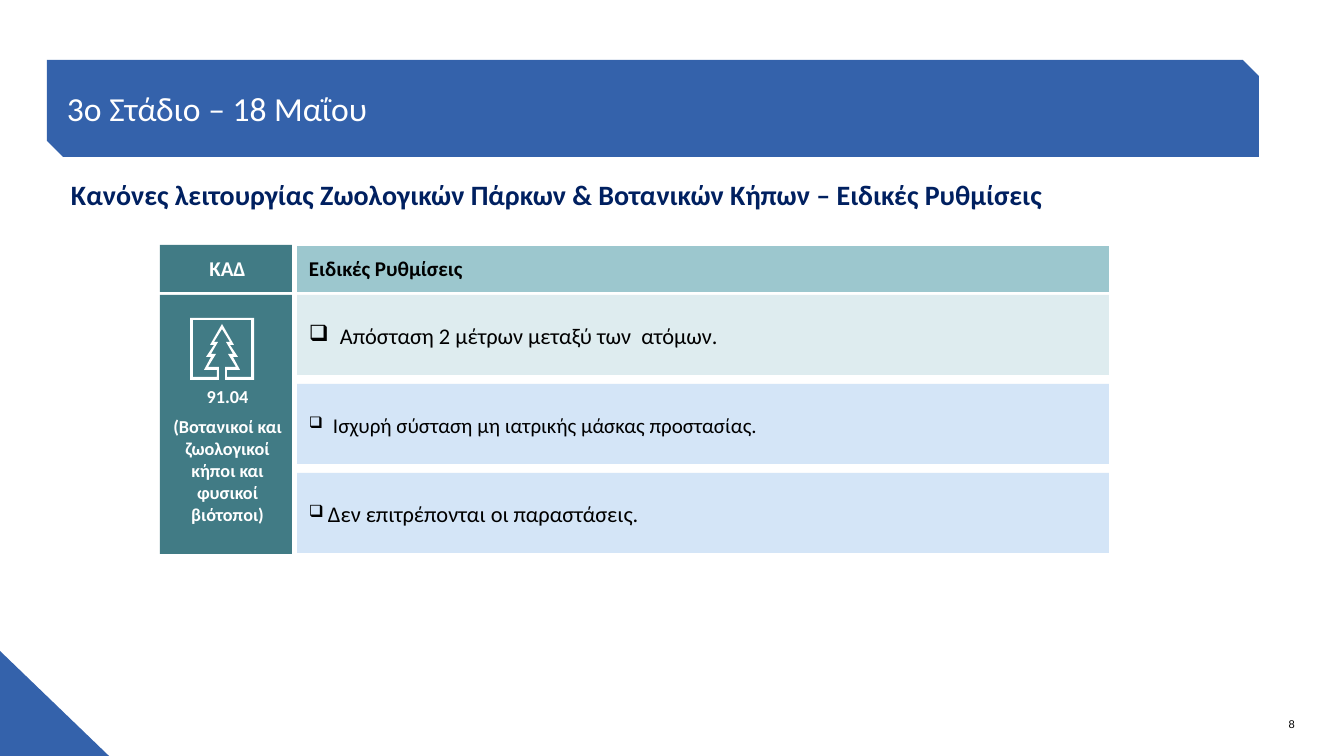
from pptx import Presentation
from pptx.dml.color import RGBColor
from pptx.enum.shapes import MSO_SHAPE
from pptx.enum.text import MSO_ANCHOR, PP_ALIGN
from pptx.oxml.ns import qn
from pptx.util import Pt
from lxml.etree import SubElement

# Content
TITLE = "3o Στάδιο – 18 Μαΐου"
SUBTITLE = "Κανόνες λειτουργίας Ζωολογικών Πάρκων & Βοτανικών Κήπων – Ειδικές Ρυθμίσεις"
CODE_HEAD, RULE_HEAD = "ΚΑΔ", "Ειδικές Ρυθμίσεις"
CODE = ["91.04", "(Βοτανικοί και ζωολογικοί κήποι και φυσικοί βιότοποι)"]
RULES = [  # text, size, fill, indent, bullet percent
    ("Απόσταση 2 μέτρων μεταξύ των  ατόμων.", 16, "DEECEF", 31, 100),
    ("Ισχυρή σύσταση μη ιατρικής μάσκας προστασίας.", 15, "D4E5F7", 24, 75),
    ("Δεν επιτρέπονται οι παραστάσεις.", 16, "D4E5F7", 19, 75),
]
NUMBER = "8"

# Left halves of the icon outlines: x from its axis, y on the slide
FRAME = [(-32, 318), (-32, 380), (-3, 380), (-3, 367), (-14, 367), (-6, 354),
         (-11, 354), (-4, 342), (-8, 342), (0, 329)]
TREE = [(-29, 320), (-29, 377), (-5, 377), (-5, 370), (-18, 370), (-11, 357),
        (-16, 357), (-8, 345), (-12, 345), (0, 324)]
AXIS = 222

BLUE, TEAL, PALE, NAVY = "3462AB", "417B85", "9CC7CE", "002060"
WHITE, BLACK = "FFFFFF", "000000"
LEFT, CODE_W = 160, 132
RULE_X, RULE_W = 297, 812
TOP, ROW_H, STEP = 295, 80, 89
SCALE = 914400 / 100.8


def px(n):
    return round(n * SCALE)


def rgb(code):
    return RGBColor.from_string(code)


def paint(shape, fill):
    shape.shadow.inherit = False
    shape.fill.solid()
    shape.fill.fore_color.rgb = rgb(fill)
    shape.line.fill.background()


def block(box, fill, kind=MSO_SHAPE.RECTANGLE):
    shape = slide.shapes.add_shape(kind, *map(px, box))
    paint(shape, fill)
    return shape


def write(shape, lines, size, color, pads, bold=False, font="Calibri",
          anchor=MSO_ANCHOR.MIDDLE, align=PP_ALIGN.LEFT, after=0):
    frame = shape.text_frame
    sides = ("margin_left", "margin_top", "margin_right", "margin_bottom")
    form = dict(zip(sides, map(px, pads)), word_wrap=True, vertical_anchor=anchor)
    for name, value in form.items():
        setattr(frame, name, value)
    for i, line in enumerate(lines):
        par = frame.add_paragraph() if i else frame.paragraphs[0]
        par.alignment, par.space_after = align, Pt(after)
        run = par.add_run()
        run.text = line
        for name, value in dict(size=Pt(size), name=font, bold=bold).items():
            setattr(run.font, name, value)
        run.font.color.rgb = rgb(color)
    return frame.paragraphs[0]


def bullet(par, indent, percent):
    props = par._p.get_or_add_pPr()
    props.set("marL", str(px(indent)))
    props.set("indent", str(-px(indent)))
    tint = SubElement(props, qn("a:buClr"))
    SubElement(tint, qn("a:srgbClr"), val=BLACK)
    SubElement(props, qn("a:buSzPct"), val=str(percent * 1000))
    SubElement(props, qn("a:buChar"), char="❑")


def mirror(half):
    right = [(-x, y) for x, y in reversed(half) if x]
    return [(AXIS + x, y) for x, y in half + right]


deck = Presentation()
deck.slide_width, deck.slide_height = px(1344), px(756)
slide = deck.slides.add_slide(deck.slide_layouts[6])

# Corner and title banner
block((0, 651, 109, 105), BLUE, MSO_SHAPE.RIGHT_TRIANGLE)
banner = block((47, 60, 1212, 97), BLUE, MSO_SHAPE.SNIP_2_DIAG_RECTANGLE)
write(banner, [TITLE], 24, WHITE, (12, 2, 12, 2))

# Subtitle and slide number
head = slide.shapes.add_textbox(*map(px, (61, 172, 1182, 44)))
write(head, [SUBTITLE], 20, NAVY, (10, 5, 10, 5), True, anchor=MSO_ANCHOR.TOP)
foot = slide.shapes.add_textbox(*map(px, (1101, 716, 194, 15)))
write(foot, [NUMBER], 8, BLACK, (0, 0, 0, 0), font="Arial",
      anchor=MSO_ANCHOR.BOTTOM, align=PP_ALIGN.RIGHT)

# Code column, with room for the icon above the text
mid = dict(bold=True, align=PP_ALIGN.CENTER, after=6)
write(block((LEFT, 245, CODE_W, 47), TEAL), [CODE_HEAD], 15, WHITE, (9, 6, 6, 6), **mid)
write(block((LEFT, TOP, CODE_W, 259), TEAL), CODE, 13, WHITE, (9, 67, 6, 6), **mid)

# Rules column
write(block((RULE_X, 246, RULE_W, 46), PALE), [RULE_HEAD], 15, BLACK, (12, 6, 8, 7), True)
for i, (text, size, fill, indent, percent) in enumerate(RULES):
    row = block((RULE_X, TOP + i * STEP, RULE_W, ROW_H), fill)
    bullet(write(row, [text], size, BLACK, (12, 8, 8, 6)), indent, percent)

# Tree icon
frame, tree = mirror(FRAME), mirror(TREE)
path = slide.shapes.build_freeform(*frame[0], scale=SCALE)
path.add_line_segments(frame[1:], close=True)
path.move_to(*tree[0])
path.add_line_segments(tree[1:], close=True)
paint(path.convert_to_shape(), WHITE)

deck.save("out.pptx")
